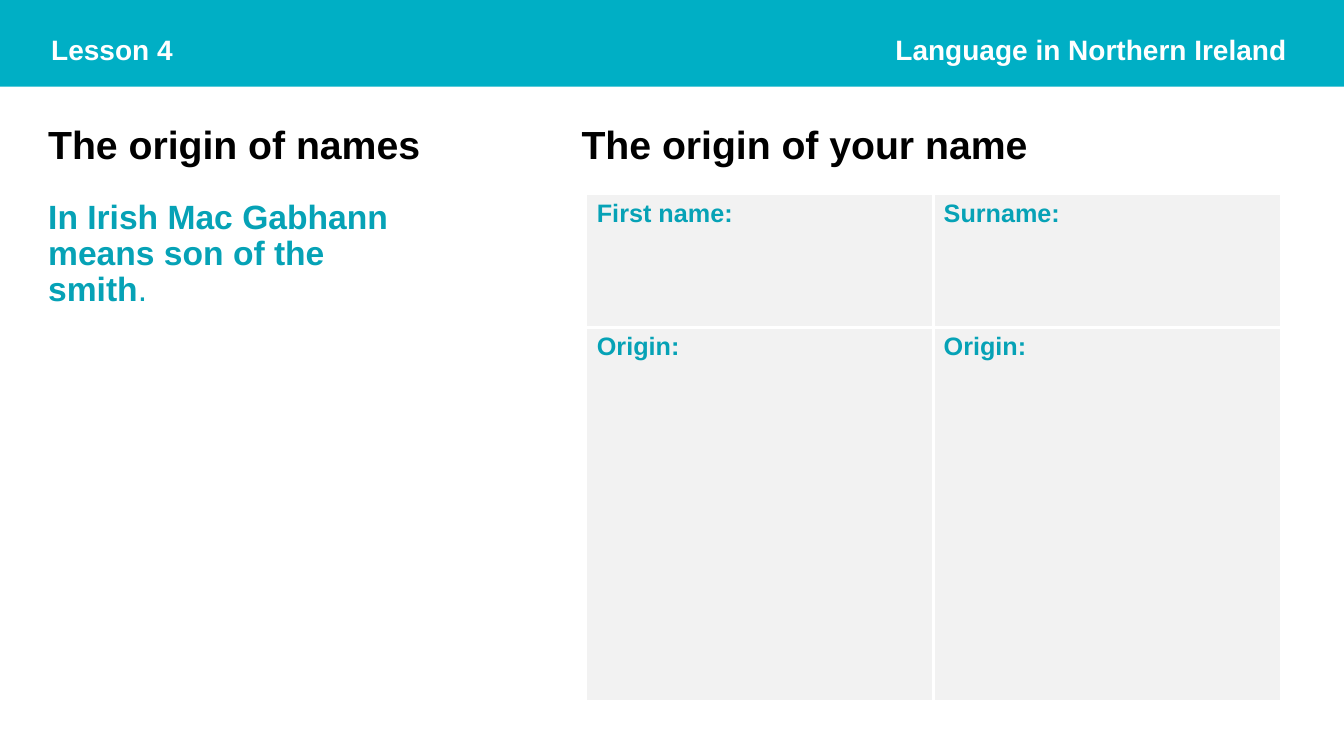
import pptx
import pptx.dml.color
import pptx.enum.shapes
import pptx.enum.text
import pptx.util
from lxml import etree
from pptx.oxml.ns import qn
from pptx.util import Inches

COLORS = {"band": "00AFC5", "teal": "06A2B6", "cell": "F2F2F2",
          "white": "FFFFFF", "black": "000000"}
ALIGN = pptx.enum.text.PP_ALIGN
ANCHOR = pptx.enum.text.MSO_ANCHOR


def rgb(name):
    """Return the named colour."""
    return pptx.dml.color.RGBColor.from_string(COLORS[name])


def write(tf, text, size=20, color="white", bold=True, align=ALIGN.LEFT, spacing=None):
    """Add a formatted run to the first paragraph of a text frame."""
    p = tf.paragraphs[0]
    p.alignment = align
    if spacing:
        p.line_spacing = spacing
    r = p.add_run()
    r.text = text
    r.font.name = "Arial"
    r.font.size = pptx.util.Pt(size)
    r.font.bold = bold
    r.font.color.rgb = rgb(color)


def add_band(s, width, height):
    """Draw the coloured band across the top."""
    sp = s.shapes.add_shape(pptx.enum.shapes.MSO_SHAPE.RECTANGLE, 0, 0,
                            Inches(width), Inches(height))
    sp.shadow.inherit = False
    sp.fill.solid()
    sp.fill.fore_color.rgb = rgb("band")
    sp.line.fill.background()


def add_text(s, box, text, anchor=ANCHOR.TOP, **fmt):
    """Add a wrapping text box and return its text frame."""
    tf = s.shapes.add_textbox(*(Inches(v) for v in box)).text_frame
    tf.word_wrap = True
    tf.vertical_anchor = anchor
    write(tf, text, **fmt)
    return tf


def add_border(cell, side):
    """Draw a white border on one side of a cell."""
    ln = etree.SubElement(cell._tc.get_or_add_tcPr(), qn(f"a:ln{side}"),
                          w=str(pptx.util.Pt(2.25)))
    fill = etree.SubElement(ln, qn("a:solidFill"))
    etree.SubElement(fill, qn("a:srgbClr"), val=COLORS["white"])


def add_name_table(s, box, rows, heights):
    """Add the grid of labelled cells with white inner borders."""
    table = s.shapes.add_table(len(rows), len(rows[0]),
                               *(Inches(v) for v in box)).table
    table.first_row = False
    table.horz_banding = False
    for i, labels in enumerate(rows):
        table.rows[i].height = Inches(heights[i])
        for j, label in enumerate(labels):
            cell = table.cell(i, j)
            add_border(cell, "L" if j else "R")
            add_border(cell, "T" if i else "B")
            cell.fill.solid()
            cell.fill.fore_color.rgb = rgb("cell")
            write(cell.text_frame, label, size=18, color="teal")


def main():
    """Build and save the slide."""
    prs = pptx.Presentation()
    prs.slide_width, prs.slide_height = Inches(13.33), Inches(7.5)
    s = prs.slides.add_slide(prs.slide_layouts[6])

    add_band(s, 13.33, 0.86)
    add_text(s, (0.41, 0.27, 1.73, 0.44), "Lesson 4")
    add_text(s, (5.94, 0.27, 6.92, 0.44), "Language in Northern Ireland",
             align=ALIGN.RIGHT)

    heading = {"anchor": ANCHOR.MIDDLE, "size": 28, "color": "black", "spacing": 0.9}
    add_text(s, (0.38, 1.11, 4.74, 0.7), "The origin of names", **heading)
    add_text(s, (5.67, 1.11, 7.66, 0.7), "The origin of your name", **heading)

    body = {"size": 24, "color": "teal", "spacing": 0.9}
    tf = add_text(s, (0.38, 1.81, 3.9, 1.43),
                  "In Irish Mac Gabhann means son of the smith",
                  anchor=ANCHOR.MIDDLE, **body)
    write(tf, ".", bold=False, **body)

    add_name_table(s, (5.82, 1.93, 6.88, 5.02),
                   [["First name:", "Surname:"], ["Origin:", "Origin:"]],
                   [1.32, 3.7])
    prs.save("out.pptx")


if __name__ == "__main__":
    main()
